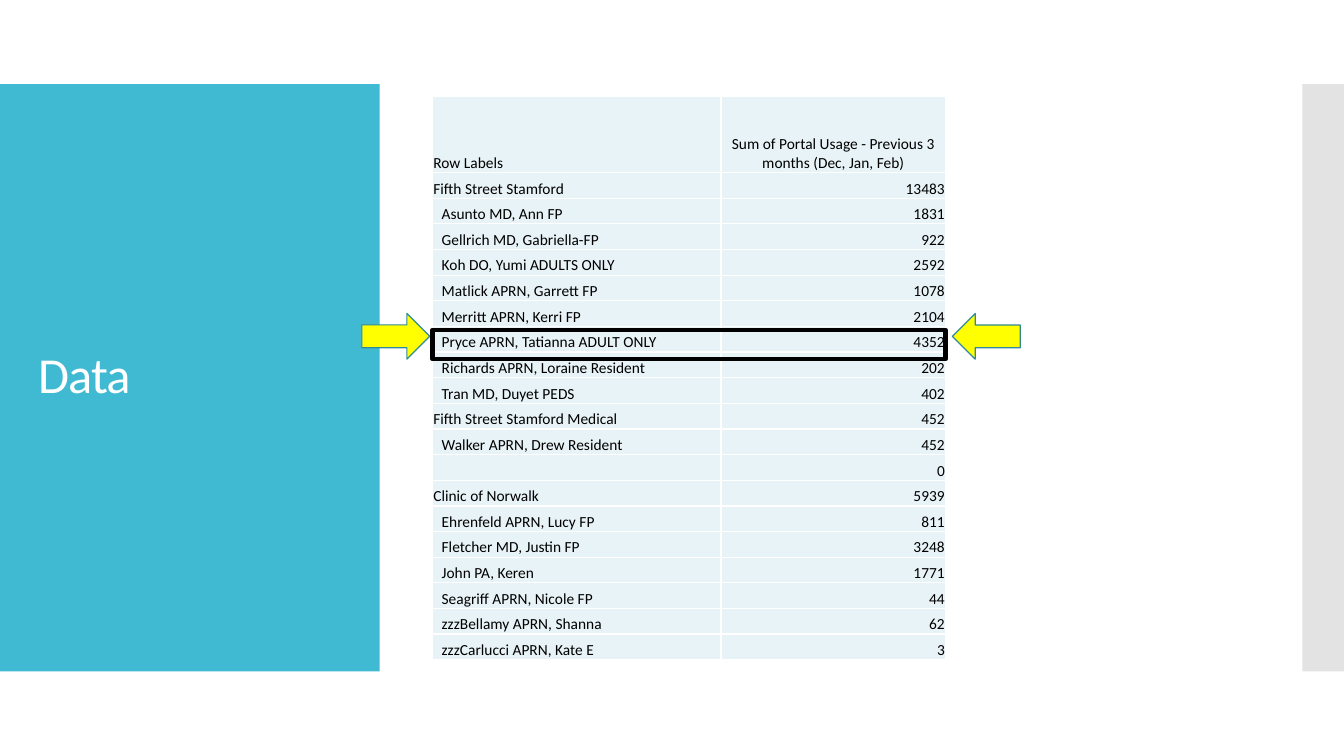
from lxml import etree
from pptx import Presentation
from pptx.dml.color import RGBColor
from pptx.enum.shapes import MSO_SHAPE
from pptx.enum.text import MSO_ANCHOR, PP_ALIGN
from pptx.oxml.ns import qn
from pptx.util import Cm, Pt

RECT, ARROW = MSO_SHAPE.RECTANGLE, MSO_SHAPE.RIGHT_ARROW
LEFT, CENTER, RIGHT = PP_ALIGN.LEFT, PP_ALIGN.CENTER, PP_ALIGN.RIGHT
MIDDLE, BOTTOM = MSO_ANCHOR.MIDDLE, MSO_ANCHOR.BOTTOM

COLORS = {
    "panel": "40BAD2", "edge": "E3E3E3", "cell": "E8F3F7", "white": "FFFFFF",
    "black": "000000", "arrow": "FFFF00", "arrow_line": "2F8A9B",
}

PORTAL_USAGE = [
    ("Row Labels", "Sum of Portal Usage - Previous 3 months (Dec, Jan, Feb)"),
    ("Fifth Street Stamford", 13483),
    ("Asunto MD, Ann FP", 1831),
    ("Gellrich MD, Gabriella-FP", 922),
    ("Koh DO, Yumi ADULTS ONLY", 2592),
    ("Matlick APRN, Garrett FP", 1078),
    ("Merritt APRN, Kerri FP", 2104),
    ("Pryce APRN, Tatianna ADULT ONLY", 4352),
    ("Richards APRN, Loraine Resident", 202),
    ("Tran MD, Duyet PEDS", 402),
    ("Fifth Street Stamford Medical", 452),
    ("Walker APRN, Drew Resident", 452),
    ("", 0),
    ("Clinic of Norwalk", 5939),
    ("Ehrenfeld APRN, Lucy FP", 811),
    ("Fletcher MD, Justin FP", 3248),
    ("John PA, Keren", 1771),
    ("Seagriff APRN, Nicole FP", 44),
    ("zzzBellamy APRN, Shanna", 62),
    ("zzzCarlucci APRN, Kate E", 3),
]
SITES = {"Row Labels", "Fifth Street Stamford", "Fifth Street Stamford Medical",
         "Clinic of Norwalk"}


def write_text(frame, text, size=11, color="black", align=LEFT, spacing=None, tracking=None):
    paragraph = frame.paragraphs[0]
    paragraph.alignment = align
    paragraph.line_spacing = spacing
    if not text:  # keeps an empty cell at the height of its row
        etree.SubElement(paragraph._p, qn("a:endParaRPr"), sz=str(size * 100))
        return
    run = paragraph.add_run()
    run.text = text
    run.font.name = "Calibri"
    run.font.size = Pt(size)
    run.font.color.rgb = RGBColor.from_string(COLORS[color])
    if tracking is not None:
        run._r.get_or_add_rPr().set("spc", str(tracking))


def add_box(kind, left, top, width, height, fill=None, line=None, weight=1):
    box = slide.shapes.add_shape(kind, Cm(left), Cm(top), Cm(width), Cm(height))
    box.shadow.inherit = False
    if fill:
        box.fill.solid()
        box.fill.fore_color.rgb = RGBColor.from_string(COLORS[fill])
    else:
        box.fill.background()
    if line:
        box.line.color.rgb = RGBColor.from_string(COLORS[line])
        box.line.width = Pt(weight)
    else:
        box.line.fill.background()
    return box


prs = Presentation()
prs.slide_width, prs.slide_height = Cm(33.87), Cm(19.05)
slide = prs.slides.add_slide(prs.slide_layouts[6])

# Side panels
add_box(RECT, 0, 2.12, 9.57, 14.8, fill="panel")
add_box(RECT, 32.82, 2.12, 1.05, 14.8, fill="edge")

# Title
title = slide.shapes.add_textbox(Cm(0.71), Cm(3.12), Cm(8.18), Cm(12.78)).text_frame
title.word_wrap = True
title.vertical_anchor = MIDDLE
write_text(title, "Data", size=36, color="white", spacing=0.9, tracking=-60)

# Arrows pointing at the highlighted row
add_box(ARROW, 9.12, 7.9, 1.71, 1.15, "arrow", "arrow_line", 0.85)
right_arrow = add_box(ARROW, 24, 7.9, 1.71, 1.15, "arrow", "arrow_line", 0.85)
right_arrow.rotation = 180

# Portal usage table
table_left, table_top, table_width, table_height = 10.9, 2.42, 12.93, 14.22
label_width, header_height = 7.27, 1.93
row_height = (table_height - header_height) / (len(PORTAL_USAGE) - 1)
usage = slide.shapes.add_table(len(PORTAL_USAGE), 2, Cm(table_left), Cm(table_top),
                               Cm(table_width), Cm(table_height)).table
usage.first_row = usage.horz_banding = False
usage.columns[0].width = Cm(label_width)
usage.columns[1].width = Cm(table_width - label_width)

for r, entry in enumerate(PORTAL_USAGE):
    usage.rows[r].height = Cm(row_height if r else header_height)
    for c, value in enumerate(entry):
        cell = usage.cell(r, c)
        is_provider = c == 0 and value not in SITES
        cell.margin_left = Cm(0.23 if is_provider else 0.02)
        cell.margin_right = cell.margin_top = Cm(0.02)
        cell.margin_bottom = 0
        cell.vertical_anchor = BOTTOM
        number_align = RIGHT if r else CENTER
        write_text(cell.text_frame, str(value), align=number_align if c else LEFT)
        # White borders precede the fill in the cell properties
        properties = cell._tc.get_or_add_tcPr()
        for side in ("lnL", "lnR", "lnT", "lnB"):
            border = etree.SubElement(properties, qn(f"a:{side}"), w=str(Pt(1)))
            solid = etree.SubElement(border, qn("a:solidFill"))
            etree.SubElement(solid, qn("a:srgbClr"), val=COLORS["white"])
        cell.fill.solid()
        cell.fill.fore_color.rgb = RGBColor.from_string(COLORS["cell"])

# Frame around the highlighted row
add_box(RECT, table_left, 8.31, table_width, 0.74, line="black", weight=3)

prs.save("out.pptx")
